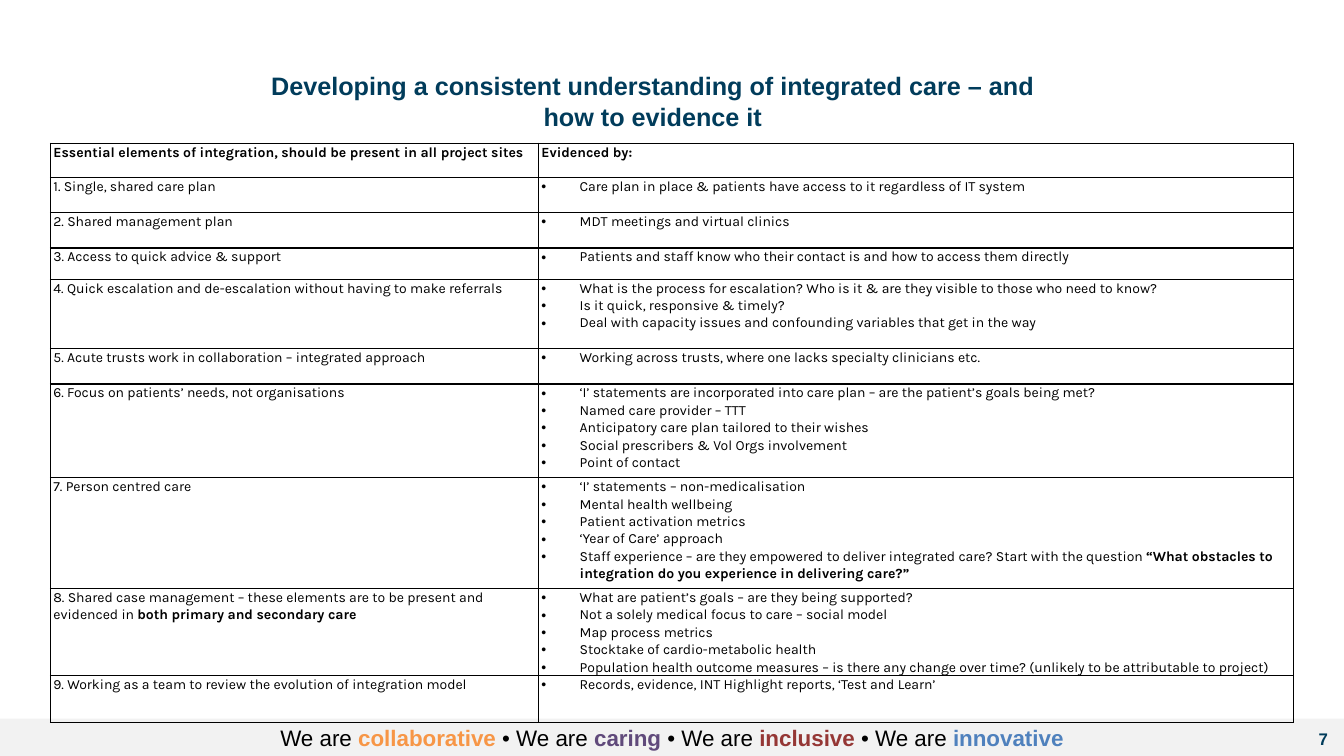
import lxml.etree
import pptx
import pptx.dml.color
import pptx.enum.shapes
import pptx.enum.text
import pptx.oxml
import pptx.oxml.ns
import pptx.util

Inches = pptx.util.Inches
ALIGN = pptx.enum.text.PP_ALIGN
MIDDLE = pptx.enum.text.MSO_ANCHOR.MIDDLE

NAVY = "013C5B"
BLACK = "000000"
FOOTER_GREY = "F2F2F2"

COLUMN_WIDTHS = [4.84, 7.49]
ROW_HEIGHTS = [0.34, 0.35, 0.35, 0.31, 0.69, 0.35, 0.93, 1.1, 0.86, 0.46]

HEADINGS = ["Essential elements of integration, should be present in all project sites",
            "Evidenced by:"]

# Each element with its evidence; a tuple is plain text followed by bold text
ELEMENTS = [
    ("1. Single, shared care plan",
     ["Care plan in place & patients have access to it regardless of IT system"]),
    ("2. Shared management plan", ["MDT meetings and virtual clinics"]),
    ("3. Access to quick advice & support",
     ["Patients and staff know who their contact is and how to access them directly"]),
    ("4. Quick escalation and de-escalation without having to make referrals",
     ["What is the process for escalation? Who is it & are they visible to those who need to know?",
      "Is it quick, responsive & timely?",
      "Deal with capacity issues and confounding variables that get in the way"]),
    ("5. Acute trusts work in collaboration – integrated approach",
     ["Working across trusts, where one lacks specialty clinicians etc."]),
    ("6. Focus on patients’ needs, not organisations",
     ["‘I’ statements are incorporated into care plan – are the patient’s goals being met?",
      "Named care provider – TTT",
      "Anticipatory care plan tailored to their wishes",
      "Social prescribers & Vol Orgs involvement",
      "Point of contact"]),
    ("7. Person centred care",
     ["‘I’ statements – non-medicalisation",
      "Mental health wellbeing",
      "Patient activation metrics",
      "‘Year of Care’ approach",
      ("Staff experience – are they empowered to deliver integrated care? Start with the question ",
       "“What obstacles to integration do you experience in delivering care?”")]),
    (("8. Shared case management – these elements are to be present and evidenced in ",
      "both primary and secondary care"),
     ["What are patient’s goals – are they being supported?",
      "Not a solely medical focus to care – social model",
      "Map process metrics",
      "Stocktake of cardio-metabolic health",
      "Population health outcome measures – is there any change over time? "
      "(unlikely to be attributable to project)"]),
    ("9. Working as a team to review the evolution of integration model",
     ["Records, evidence, INT Highlight reports, ‘Test and Learn’"]),
]

VALUES = [("collaborative", "F79646"), ("caring", "604A7B"),
          ("inclusive", "953735"), ("innovative", "4F81BD")]


def rgb(hex_colour):
    return pptx.dml.color.RGBColor.from_string(hex_colour)


def add_text(para, text, size=10, font="Karla", colour=BLACK, bold=False):
    span = para.add_run()
    span.text = text
    span.font.size = pptx.util.Pt(size)
    span.font.name = font
    span.font.color.rgb = rgb(colour)
    span.font.bold = bold


def prepare_frame(frame, margin_x=0.1, margin_y=0.05):
    frame.word_wrap = True
    frame.auto_size = pptx.enum.text.MSO_AUTO_SIZE.NONE
    frame.vertical_anchor = MIDDLE
    frame.margin_left = frame.margin_right = Inches(margin_x)
    frame.margin_top = frame.margin_bottom = Inches(margin_y)


def add_bullet(para, indent=0.38):
    properties = para._p.get_or_add_pPr()
    properties.set("marL", str(Inches(indent)))
    properties.set("indent", str(-Inches(indent)))
    for tag, name, value in [("a:buFont", "typeface", "Arial"), ("a:buChar", "char", "•")]:
        element = lxml.etree.SubElement(properties, pptx.oxml.ns.qn(tag))
        element.set(name, value)


def add_borders(cell, colour=BLACK, width=1):
    properties = cell._tc.get_or_add_tcPr()
    for side in ("lnL", "lnR", "lnT", "lnB"):
        properties.append(pptx.oxml.parse_xml(
            f'<a:{side} {pptx.oxml.ns.nsdecls("a")} w="{pptx.util.Pt(width)}">'
            f'<a:solidFill><a:srgbClr val="{colour}"/></a:solidFill></a:{side}>'))


def fill_cell(cell, entries, bulleted=False, bold=False):
    add_borders(cell)
    cell.fill.background()
    cell.margin_left = cell.margin_right = Inches(0.03)
    cell.margin_top = cell.margin_bottom = 0
    for index, entry in enumerate(entries):
        para = cell.text_frame.add_paragraph() if index else cell.text_frame.paragraphs[0]
        para.line_spacing = 1.07
        if bulleted:
            add_bullet(para)
        plain, strong = entry if isinstance(entry, tuple) else (entry, "")
        add_text(para, plain, bold=bold)
        if strong:
            add_text(para, strong, bold=True)


def add_footer(page, left, top, width, height):
    # Grey band with the four values
    band = page.shapes.add_shape(pptx.enum.shapes.MSO_SHAPE.RECTANGLE, left, top, width, height)
    band.shadow.inherit = False
    band.fill.solid()
    band.fill.fore_color.rgb = rgb(FOOTER_GREY)
    band.line.fill.background()
    prepare_frame(band.text_frame, margin_y=0)
    para = band.text_frame.paragraphs[0]
    para.alignment = ALIGN.CENTER
    for index, (value, colour) in enumerate(VALUES):
        lead = " • We are " if index else "We are "
        add_text(para, lead, size=16, font="Arial")
        add_text(para, value, size=16, font="Arial", colour=colour, bold=True)

    # Page number at the right end of the band
    number_width = Inches(1.85)
    number = page.shapes.add_textbox(left + width - number_width - Inches(0.06), top,
                                     number_width, Inches(0.4))
    prepare_frame(number.text_frame)
    para = number.text_frame.paragraphs[0]
    para.alignment = ALIGN.RIGHT
    add_text(para, "7", size=12, font="Arial", colour=NAVY, bold=True)


def add_title(page, left, top, width, height):
    title = page.shapes.title
    title.left, title.top, title.width, title.height = left, top, width, height
    prepare_frame(title.text_frame)
    para = title.text_frame.paragraphs[0]
    para.alignment = ALIGN.CENTER
    add_text(para, "Developing a consistent understanding of integrated care – and how to evidence it",
             size=18, font="Arial", colour=NAVY, bold=True)


def add_evidence_table(page, left, top, width, height):
    frame = page.shapes.add_table(len(ROW_HEIGHTS), len(COLUMN_WIDTHS), left, top, width, height)
    table = frame.table
    table.first_row = table.horz_banding = False
    for column, column_width in zip(table.columns, COLUMN_WIDTHS):
        column.width = Inches(column_width)
    for row, row_height in zip(table.rows, ROW_HEIGHTS):
        row.height = Inches(row_height)
    for index, heading in enumerate(HEADINGS):
        fill_cell(table.cell(0, index), [heading], bold=True)
    for index, (element, evidence) in enumerate(ELEMENTS, start=1):
        fill_cell(table.cell(index, 0), [element])
        fill_cell(table.cell(index, 1), evidence, bulleted=True)


def main():
    deck = pptx.Presentation()
    deck.slide_width, deck.slide_height = Inches(13.33), Inches(7.5)
    page = deck.slides.add_slide(deck.slide_layouts[5])
    add_footer(page, 0, Inches(7.13), deck.slide_width, Inches(0.37))
    add_title(page, Inches(2.36), Inches(0.64), Inches(8.23), Inches(0.72))
    add_evidence_table(page, Inches(0.5), Inches(1.42),
                       Inches(sum(COLUMN_WIDTHS)), Inches(sum(ROW_HEIGHTS)))
    deck.save("out.pptx")


if __name__ == "__main__":
    main()
